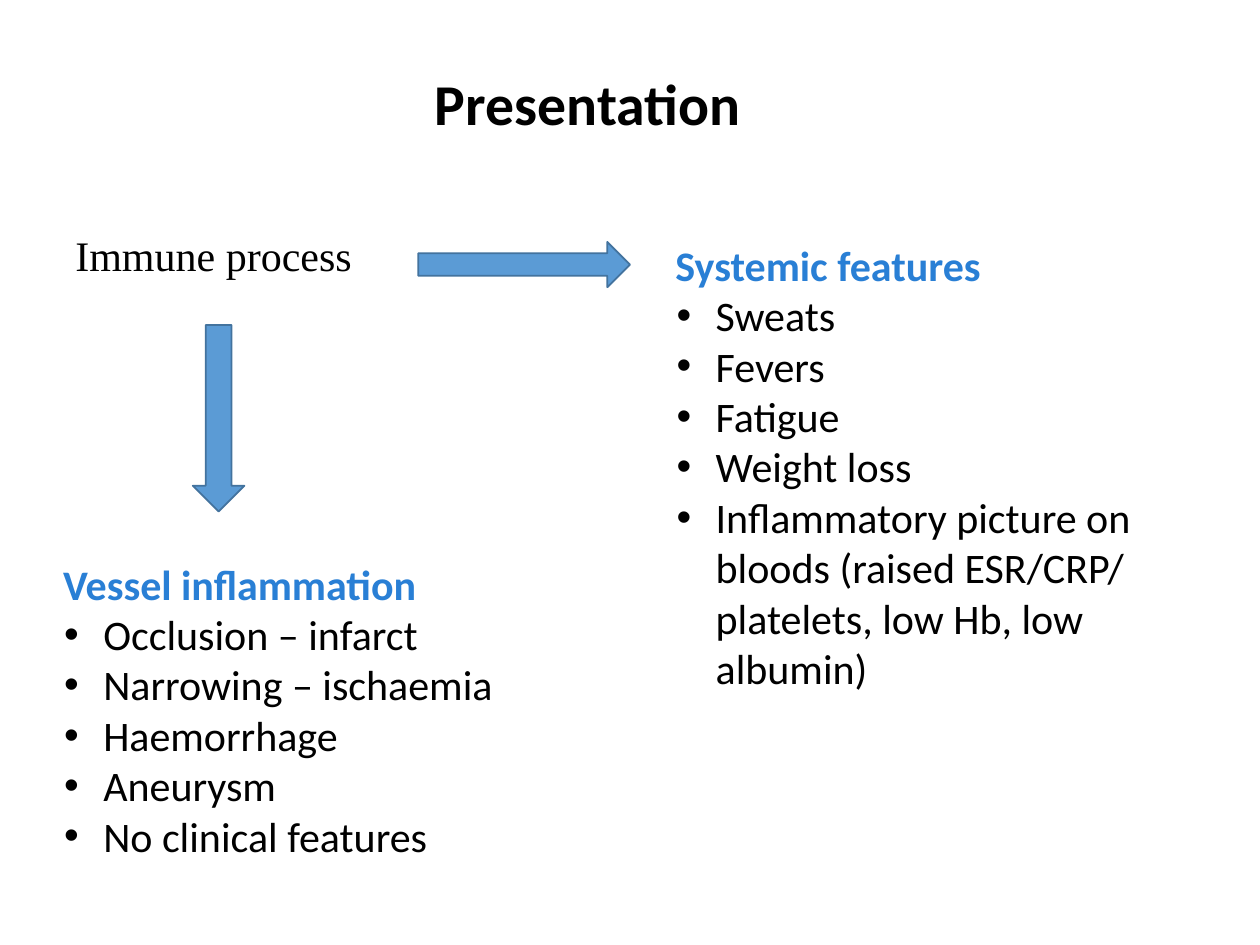
from lxml.etree import SubElement
from pptx import Presentation
from pptx.dml.color import RGBColor
from pptx.enum.shapes import MSO_SHAPE
from pptx.enum.text import MSO_ANCHOR, PP_ALIGN
from pptx.oxml.ns import qn
from pptx.util import Inches, Pt

COLORS = {
    "text": "000000",
    "heading": "297FD5",
    "arrow": "5B9BD5",
    "arrow_line": "43739E",
}


def color(name):
    return RGBColor.from_string(COLORS[name])


def format_font(paragraph, size, name="Calibri", color_name="text", bold=False):
    for run in paragraph.runs:
        run.font.size = Pt(size)
        run.font.name = name
        run.font.bold = bold
        run.font.color.rgb = color(color_name)


def add_text_frame(slide, box, wrap=True):
    text_frame = slide.shapes.add_textbox(*map(Inches, box)).text_frame
    text_frame.word_wrap = wrap
    return text_frame


def indent(paragraph, left, first_line=0, bullet=None):
    properties = paragraph._p.get_or_add_pPr()
    properties.set("marL", str(Inches(left)))
    properties.set("indent", str(Inches(first_line)))
    if bullet:
        SubElement(properties, qn("a:buFont"), typeface="Arial")
        SubElement(properties, qn("a:buChar"), char=bullet)


def add_title(slide, box, text):
    text_frame = add_text_frame(slide, box)
    text_frame.vertical_anchor = MSO_ANCHOR.MIDDLE
    text_frame.text = text
    paragraph = text_frame.paragraphs[0]
    paragraph.alignment = PP_ALIGN.CENTER
    paragraph.line_spacing = 0.9
    format_font(paragraph, 33, bold=True)


def add_cause(slide, box, text):
    text_frame = add_text_frame(slide, box)
    text_frame.text = text
    format_font(text_frame.paragraphs[0], 24, name="Times New Roman")


def add_feature_list(slide, box, heading, features, wrap=True):
    text_frame = add_text_frame(slide, box, wrap)
    text_frame.margin_left = text_frame.margin_top = text_frame.margin_bottom = 0
    text_frame.margin_right = Inches(0.04)
    text_frame.text = "\n".join([heading, *features])
    heading_paragraph, *feature_paragraphs = text_frame.paragraphs
    indent(heading_paragraph, 0.04)
    format_font(heading_paragraph, 24, color_name="heading", bold=True)
    for paragraph in feature_paragraphs:
        indent(paragraph, 0.36, -0.31, "•")
        format_font(paragraph, 24)


def add_arrow(slide, box, preset):
    arrow = slide.shapes.add_shape(preset, *map(Inches, box))
    arrow.shadow.inherit = False
    arrow.fill.solid()
    arrow.fill.fore_color.rgb = color("arrow")
    arrow.line.color.rgb = color("arrow_line")
    arrow.line.width = Pt(1)


def main():
    presentation = Presentation()
    presentation.slide_width = Inches(10)
    presentation.slide_height = Inches(7.5)
    slide = presentation.slides.add_slide(presentation.slide_layouts[6])

    add_feature_list(slide, (5.32, 1.9, 3.79, 4.03), "Systemic features", [
        "Sweats",
        "Fevers",
        "Fatigue",
        "Weight loss",
        "Inflammatory picture on bloods (raised ESR/CRP/ platelets, low Hb, low albumin)",
    ])
    add_feature_list(slide, (0.46, 4.43, 3.52, 2.42), "Vessel inflammation", [
        "Occlusion – infarct",
        "Narrowing – ischaemia",
        "Haemorrhage",
        "Aneurysm",
        "No clinical features",
    ], wrap=False)
    add_cause(slide, (0.5, 1.77, 2.61, 0.5), "Immune process")
    add_title(slide, (0.5, 0.22, 8.33, 1.25), "Presentation")
    add_arrow(slide, (1.53, 2.58, 0.41, 1.48), MSO_SHAPE.DOWN_ARROW)
    add_arrow(slide, (3.32, 1.92, 1.68, 0.36), MSO_SHAPE.RIGHT_ARROW)

    presentation.save("out.pptx")


if __name__ == "__main__":
    main()
